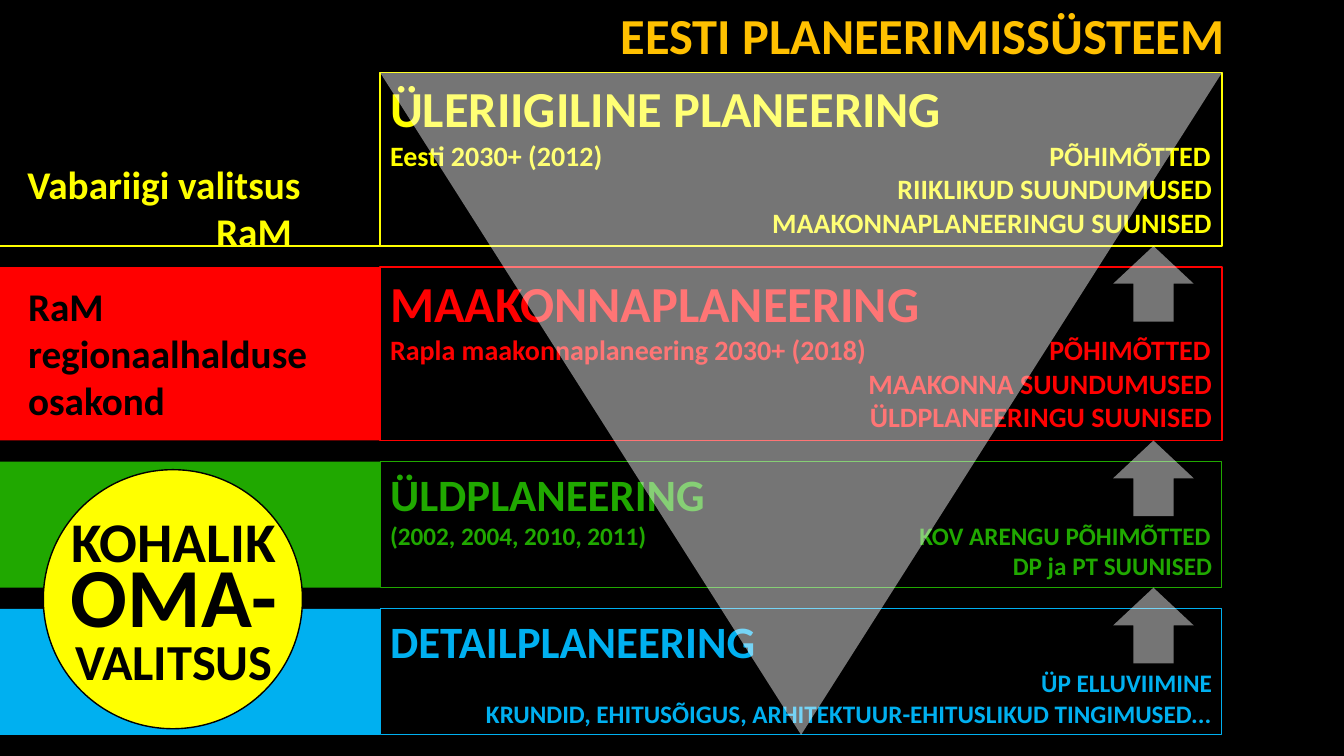
import pptx
import pptx.dml.color
import pptx.enum.shapes
import pptx.enum.text
import pptx.oxml
import pptx.oxml.ns
import pptx.util

Inches = pptx.util.Inches
Pt = pptx.util.Pt
RGBColor = pptx.dml.color.RGBColor
Shape = pptx.enum.shapes.MSO_SHAPE
Align = pptx.enum.text.PP_ALIGN
Anchor = pptx.enum.text.MSO_ANCHOR

BLACK = RGBColor(0x00, 0x00, 0x00)
WHITE = RGBColor(0xFF, 0xFF, 0xFF)
YELLOW = RGBColor(0xFF, 0xFF, 0x00)
RED = RGBColor(0xFF, 0x00, 0x00)
GREEN = RGBColor(0x20, 0xA8, 0x00)
BLUE = RGBColor(0x00, 0xB0, 0xF0)
ORANGE = RGBColor(0xFF, 0xC0, 0x00)

# Grid in inches: an owner column, a plan column and four rows
OWNER_WIDTH = 3.77
PLAN_WIDTH = 8.35
FIRST_TOP = 0.72
ROW_GAP = 0.21
TAB_STOP = 8.14
VEIL_OPACITY = 46

presentation = pptx.Presentation()
presentation.slide_width = Inches(13.33)
presentation.slide_height = Inches(7.5)
slide = presentation.slides.add_slide(presentation.slide_layouts[5])
slide.background.fill.solid()
slide.background.fill.fore_color.rgb = BLACK


def write(frame, text, size, color, align=Align.LEFT, spacing=None, tab=None, paragraph=None):
    """Write a new paragraph, or one more run of the given paragraph."""
    if paragraph is None:
        first = frame.paragraphs[0]
        paragraph = frame.add_paragraph() if first.runs else first
        paragraph.alignment = align
        if spacing:
            paragraph.line_spacing = Pt(spacing)
        if tab:
            paragraph._p.get_or_add_pPr().append(pptx.oxml.parse_xml(
                f'<a:tabLst {pptx.oxml.ns.nsdecls("a")}>'
                f'<a:tab pos="{Inches(tab)}" algn="r"/></a:tabLst>'))
    run = paragraph.add_run()
    run.text = text
    run.font.name = "Calibri"
    run.font.size = Pt(size)
    run.font.bold = True
    run.font.color.rgb = color
    return paragraph


def draw(kind, left, top, width, height, fill=None, line=None, weight=1, opacity=100):
    """Draw a preset shape, measured in inches."""
    shape = slide.shapes.add_shape(
        kind, Inches(left), Inches(top), Inches(width), Inches(height))
    shape.shadow.inherit = False
    if fill is None:
        shape.fill.background()
    else:
        shape.fill.solid()
        shape.fill.fore_color.rgb = fill
        if opacity < 100:
            color = shape.fill._xPr.find(".//" + pptx.oxml.ns.qn("a:srgbClr"))
            color.append(pptx.oxml.parse_xml(
                f'<a:alpha {pptx.oxml.ns.nsdecls("a")} val="{opacity * 1000}"/>'))
    if line is None:
        shape.line.fill.background()
    else:
        shape.line.color.rgb = line
        shape.line.width = Pt(weight)
    return shape


# Title
title = slide.shapes.title
title.left, title.top = Inches(2.84), Inches(-0.01)
title.width, title.height = Inches(9.41), Inches(0.71)
title.text_frame.auto_size = pptx.enum.text.MSO_AUTO_SIZE.NONE
title.text_frame.vertical_anchor = Anchor.TOP
write(title.text_frame, "EESTI PLANEERIMISSÜSTEEM", 36, ORANGE, align=Align.RIGHT)

# Plan levels: colour, owner band, height, line weight, sizes, heading, tabbed line, goals
levels = [
    (YELLOW, False, 1.72, 1, 36, 20, "ÜLERIIGILINE PLANEERING",
     "Eesti 2030+ (2012)\tPÕHIMÕTTED",
     ["RIIKLIKUD SUUNDUMUSED", "MAAKONNAPLANEERINGU SUUNISED"]),
    (RED, True, 1.72, 1, 36, 20, "MAAKONNAPLANEERING",
     "Rapla maakonnaplaneering 2030+ (2018)\tPÕHIMÕTTED",
     ["MAAKONNA SUUNDUMUSED", "ÜLDPLANEERINGU SUUNISED"]),
    (GREEN, True, 1.25, 0.75, 32, 18, "ÜLDPLANEERING",
     "(2002, 2004, 2010, 2011)\tKOV ARENGU PÕHIMÕTTED",
     ["DP ja PT SUUNISED"]),
    (BLUE, True, 1.25, 0.75, 32, 18, "DETAILPLANEERING", None,
     ["ÜP ELLUVIIMINE", "KRUNDID, EHITUSÕIGUS, ARHITEKTUUR-EHITUSLIKUD TINGIMUSED..."]),
]
top = FIRST_TOP
bottoms = []
for color, has_owner, height, weight, large, small, heading, tabbed, goals in levels:
    if has_owner:
        draw(Shape.RECTANGLE, 0, top, OWNER_WIDTH, height, fill=color)
    plan = draw(Shape.RECTANGLE, OWNER_WIDTH, top, PLAN_WIDTH, height,
                line=color, weight=weight)
    frame = plan.text_frame
    frame.vertical_anchor = Anchor.TOP
    write(frame, heading, large, color)
    if tabbed:
        write(frame, tabbed, small, color, tab=TAB_STOP)
    for goal in goals:
        write(frame, goal, small, color, align=Align.RIGHT)
    bottoms.append(top + height)
    top += height + ROW_GAP

# Translucent funnel over all levels, and arrows from each level to the one above
funnel = draw(Shape.ISOSCELES_TRIANGLE, OWNER_WIDTH, FIRST_TOP, PLAN_WIDTH,
              bottoms[-1] - FIRST_TOP, fill=WHITE, opacity=VEIL_OPACITY)
funnel.rotation = 180
for bottom in bottoms[:-1]:
    draw(Shape.UP_ARROW, 11.04, bottom, 0.8, 0.75, fill=WHITE, opacity=VEIL_OPACITY)

# Rule under the government's label
rule = slide.shapes.add_connector(
    pptx.enum.shapes.MSO_CONNECTOR.STRAIGHT,
    Inches(OWNER_WIDTH), Inches(bottoms[0]), Inches(0), Inches(bottoms[0]))
rule.line.color.rgb = YELLOW
rule.line.width = Pt(1)
rule._element.spPr.append(pptx.oxml.parse_xml(
    f'<a:effectLst {pptx.oxml.ns.nsdecls("a")}/>'))

# Owner labels
owners = [
    (0.14, 1.54, 2.94, 1.04, YELLOW, Align.RIGHT, ["Vabariigi valitsus", "RaM "]),
    (0.18, 2.75, 3.09, 1.51, BLACK, Align.LEFT, ["RaM", "regionaalhalduse", "osakond"]),
]
for left, top, width, height, color, align, lines in owners:
    label = slide.shapes.add_textbox(
        Inches(left), Inches(top), Inches(width), Inches(height))
    label.text_frame.word_wrap = False
    for text in lines:
        write(label.text_frame, text, 28, color, align=align)

# Local government circle
draw(Shape.OVAL, 0.43, 4.66, 2.57, 2.57, fill=YELLOW, line=BLACK)
local = slide.shapes.add_textbox(Inches(0.49), Inches(4.95), Inches(2.47), Inches(2.01))
frame = local.text_frame
frame.word_wrap = True
name = write(frame, "KOHALIK", 40, BLACK, align=Align.CENTER, spacing=50)
write(frame, " ", 24, BLACK, paragraph=name)
write(frame, "OMA-", 60, BLACK, paragraph=name)
write(frame, "VALITSUS", 36, BLACK, align=Align.CENTER, spacing=33)

presentation.save("out.pptx")
